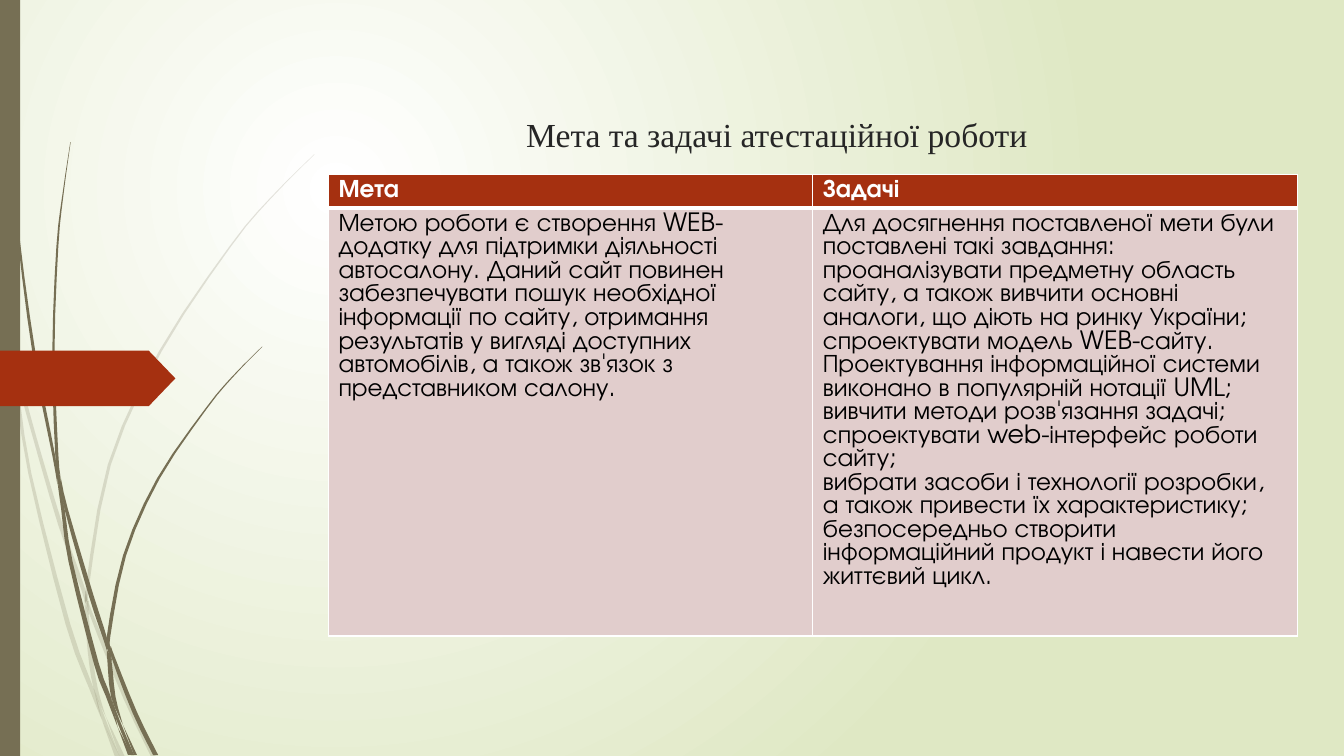
from lxml import etree
from pptx import Presentation
from pptx.dml.color import RGBColor
from pptx.enum.shapes import MSO_SHAPE
from pptx.enum.text import MSO_ANCHOR, PP_ALIGN
from pptx.oxml import parse_xml
from pptx.oxml.ns import nsdecls, qn
from pptx.util import Pt

WHITE = RGBColor(0xFF, 0xFF, 0xFF)
BLACK = RGBColor(0x00, 0x00, 0x00)
CHARCOAL = RGBColor(0x26, 0x26, 0x26)
MEADOW = RGBColor(0xDF, 0xE8, 0xC4)
OLIVE = RGBColor(0x76, 0x6F, 0x54)
RUST = RGBColor(0xA5, 0x30, 0x10)
ROSE = RGBColor(0xE1, 0xCD, 0xCC)

TITLE_FORMAT = {"name": "Times New Roman", "size": Pt(24), "bold": False}
HEADER_FORMAT = {"name": "TeX Gyre Adventor", "size": Pt(18), "bold": True}
BODY_FORMAT = {**HEADER_FORMAT, "bold": False}

PALE_BLADES = [
    [(0, 203, 0), (1.4, 215.3, 2.8), (5.2, 231.8, 2.4), (7.9, 252, 0)],
    [(10.1, 248.4, 0), (13.7, 270.7, 2.6), (24.6, 311.8, 2.6),
     (43.2, 375, 3.2), (59.8, 422, 2.9), (60.5, 431.3, 0)],
    [(63.4, 429.1, 0), (64.9, 438, 2.5), (90, 499, 3.6), (109.8, 540.7, 3.6)],
    [(75.6, 511.9, 0), (87.5, 540.7, 3.6)],
    [(7.9, 252, 0), (11.2, 271, 2.2), (21.3, 338, 2.2), (48.6, 446, 3.4),
     (65.4, 492, 3.2), (72.7, 514, 0)],
    [(60.5, 431.3, 0), (62.1, 439.2, 2.5), (64.1, 465, 2.9), (68.4, 492, 3),
     (75.6, 512, 0)],
    [(224.6, 110.2, 0.3), (193, 141.9, 0.9), (164.5, 176, 1.2),
     (114.5, 251, 2), (78.1, 332, 2.2), (62.3, 420.5, 2.2), (63.4, 429.1, 0)],
    [(72.7, 514.1, 0), (83.9, 540.7, 3.6)],
    [(61.2, 421.9, 0), (61.9, 430, 2.4), (63.4, 439.2, 0)],
    [(67, 491.8, 0), (73.8, 513, 2.6), (85.7, 540.7, 0)],
]
DARK_BLADES = [
    [(2.5, 0, 0.7), (3.2, 34.6, 0.7), (5.4, 78.5, 0.9), (13, 167.4, 1.4),
     (24.8, 255.6, 2.2), (38.5, 326, 2), (41, 346.3, 0)],
    [(43.2, 339.8, 0), (47.3, 363.6, 2.4), (65.2, 425.5, 3.4),
     (75, 455.8, 2.9), (76.3, 464.4, 0)],
    [(79.2, 461.5, 0), (81, 470, 2.5), (96.3, 509, 3.4), (111.2, 539.3, 3.6)],
    [(41, 343.4, 0), (45, 364, 2.5), (50.4, 401, 2.9), (68.8, 473.8, 3.6),
     (77.4, 497.5, 3.4), (84.2, 519.8, 0)],
    [(50.4, 101.5, 0.3), (45, 139, 0.8), (41, 176.4, 1.4), (38.2, 251, 1.6),
     (40.6, 324, 2.2), (43.2, 339.8, 0)],
    [(87.8, 517.7, 0), (96.8, 539.3, 2.2)],
    [(39.6, 323.3, 0), (42, 342, 2.4), (46.1, 363.6, 0)],
    [(187.2, 247.7, 0.3), (166.3, 269, 1), (147.2, 292, 1.2), (113, 342, 2),
     (88.9, 397, 2.2), (77.5, 455, 2.5), (79.2, 461.5, 0)],
    [(84.2, 519.8, 0), (92.9, 539.3, 2.9)],
    [(76.3, 464.4, 0), (78.2, 472, 2.9), (80.9, 497.5, 3.2), (87.8, 517.7, 0)],
    [(76.3, 454.3, 0), (77.8, 463, 2.6), (79.9, 472.3, 0)],
    [(79.2, 497.5, 0), (84.2, 514, 2.2), (94.7, 539.3, 2.2)],
]

TITLE = "Мета та задачі атестаційної роботи"
GOAL = (
    "Метою роботи є створення WEB-додатку для підтримки діяльності автосалону. "
    "Даний сайт повинен забезпечувати пошук необхідної інформації по сайту, "
    "отримання результатів у вигляді доступних автомобілів, а також зв'язок "
    "з представником салону."
)
TASKS = [
    "Для досягнення поставленої мети були поставлені такі завдання:",
    "проаналізувати предметну область сайту, а також вивчити основні аналоги, "
    "що діють на ринку України;",
    "спроектувати модель WEB-сайту. Проектування інформаційної системи "
    "виконано в популярній нотації UML;",
    "вивчити методи розв'язання задачі;",
    "спроектувати web-інтерфейс роботи сайту;",
    "вибрати засоби і технології розробки, а також привести їх характеристику;",
    "безпосередньо створити інформаційний продукт і навести його життєвий цикл.",
]
COLUMNS = [("Мета", [GOAL]), ("Задачі", TASKS)]


def paint_background(slide):
    """Fill the background with a circular gradient."""
    fill = slide.background.fill
    fill.gradient()
    for stop, color, position in zip(fill.gradient_stops, (WHITE, MEADOW), (0, 1)):
        stop.color.rgb = color
        stop.position = position
    gradient = slide.background._cSld.find(".//" + qn("a:gradFill"))
    gradient.replace(gradient.find(qn("a:lin")), parse_xml(
        f'<a:path {nsdecls("a")} path="circle"><a:fillToRect '
        'l="50000" t="50000" r="100000" b="100000"/></a:path>'))


def paint(shape, color, opacity=100):
    """Give a shape a plain fill with no outline or shadow."""
    shape.shadow.inherit = False
    shape.line.fill.background()
    shape.fill.solid()
    shape.fill.fore_color.rgb = color
    if opacity < 100:
        tint = shape._element.spPr.find(".//" + qn("a:srgbClr"))
        etree.SubElement(tint, qn("a:alpha")).set("val", str(opacity * 1000))


def smooth(knots, steps=3):
    """Interpolate a Catmull-Rom curve through the knots."""
    padded = [knots[0], *knots, knots[-1]]
    curve = []
    for before, start, end, after in zip(padded, padded[1:], padded[2:], padded[3:]):
        for t in (step / steps for step in range(steps)):
            curve.append([
                b + ((c - a) * t + (2 * a - 5 * b + 4 * c - d) * t ** 2
                     + (3 * b - a - 3 * c + d) * t ** 3) / 2
                for a, b, c, d in zip(before, start, end, after)])
    return curve + [knots[-1]]


def add_blade(slide, knots, opacity):
    """Draw a grass blade from knots of x, y and width."""
    spine = smooth(knots) if len(knots) > 2 else knots
    left = [(x - width / 2, y) for x, y, width in spine]
    right = [(x + width / 2, y) for x, y, width in reversed(spine)]
    outline = [(x * 100, y * 100) for x, y in left + right]
    builder = slide.shapes.build_freeform(*outline[0], scale=Pt(1) / 100)
    builder.add_line_segments(outline[1:], close=True)
    paint(builder.convert_to_shape(), OLIVE, opacity)


def add_block(slide, preset, left, top, width, height, color):
    """Draw a plain decorative block."""
    block = slide.shapes.add_shape(preset, Pt(left), Pt(top), Pt(width), Pt(height))
    paint(block, color)
    return block


def write(frame, paragraphs, formats, color, align=PP_ALIGN.LEFT):
    """Write formatted paragraphs into a text frame."""
    frame.text = "\n".join(paragraphs)
    for paragraph in frame.paragraphs:
        paragraph.alignment = align
        for run in paragraph.runs:
            for attribute, value in formats.items():
                setattr(run.font, attribute, value)
            run.font.color.rgb = color


def add_title(slide):
    """Place and format the slide title."""
    title = slide.shapes.title
    place = {"left": 204, "top": 48, "width": 702, "height": 96}
    for attribute, value in place.items():
        setattr(title, attribute, Pt(value))
    title.text_frame.vertical_anchor = MSO_ANCHOR.MIDDLE
    write(title.text_frame, [TITLE], TITLE_FORMAT, CHARCOAL, PP_ALIGN.CENTER)


def set_borders(cell, widths):
    """Draw white borders with a width for each side."""
    properties = cell._tc.get_or_add_tcPr()
    for index, (side, width) in enumerate(widths.items()):
        properties.insert(index, parse_xml(
            f'<a:ln{side} {nsdecls("a")} w="{Pt(width)}"><a:solidFill>'
            f'<a:srgbClr val="{WHITE}"/></a:solidFill></a:ln{side}>'))


def add_goal_table(slide):
    """Add the table of the goal and the tasks."""
    table = slide.shapes.add_table(
        2, len(COLUMNS), Pt(234.6), Pt(124.4), Pt(692), Pt(328.3)).table
    table.rows[0].height, table.rows[1].height = Pt(22.3), Pt(306)
    for column, (heading, paragraphs) in enumerate(COLUMNS):
        rows = [([heading], HEADER_FORMAT, WHITE, RUST, 3),
                (paragraphs, BODY_FORMAT, BLACK, ROSE, 1)]
        for row, (texts, formats, ink, background, bottom) in enumerate(rows):
            cell = table.cell(row, column)
            cell.margin_right = Pt(10)
            cell.fill.solid()
            cell.fill.fore_color.rgb = background
            write(cell.text_frame, texts, formats, ink)
            top = 3 if row else 1
            set_borders(cell, {"L": 1, "R": 1, "T": top, "B": bottom})


def main():
    """Build and save the slide."""
    deck = Presentation()
    deck.slide_width, deck.slide_height = Pt(960), Pt(540)
    slide = deck.slides.add_slide(deck.slide_layouts[5])
    paint_background(slide)
    for blades, opacity in ((PALE_BLADES, 20), (DARK_BLADES, 100)):
        for knots in blades:
            add_blade(slide, knots, opacity)
    add_block(slide, MSO_SHAPE.RECTANGLE, 0, 0, 14.4, 540, OLIVE)
    marker = add_block(slide, MSO_SHAPE.PENTAGON, 0, 250.5, 125.3, 39.6, RUST)
    marker.adjustments[0] = 0.48
    add_title(slide)
    add_goal_table(slide)
    deck.save("out.pptx")


if __name__ == "__main__":
    main()
